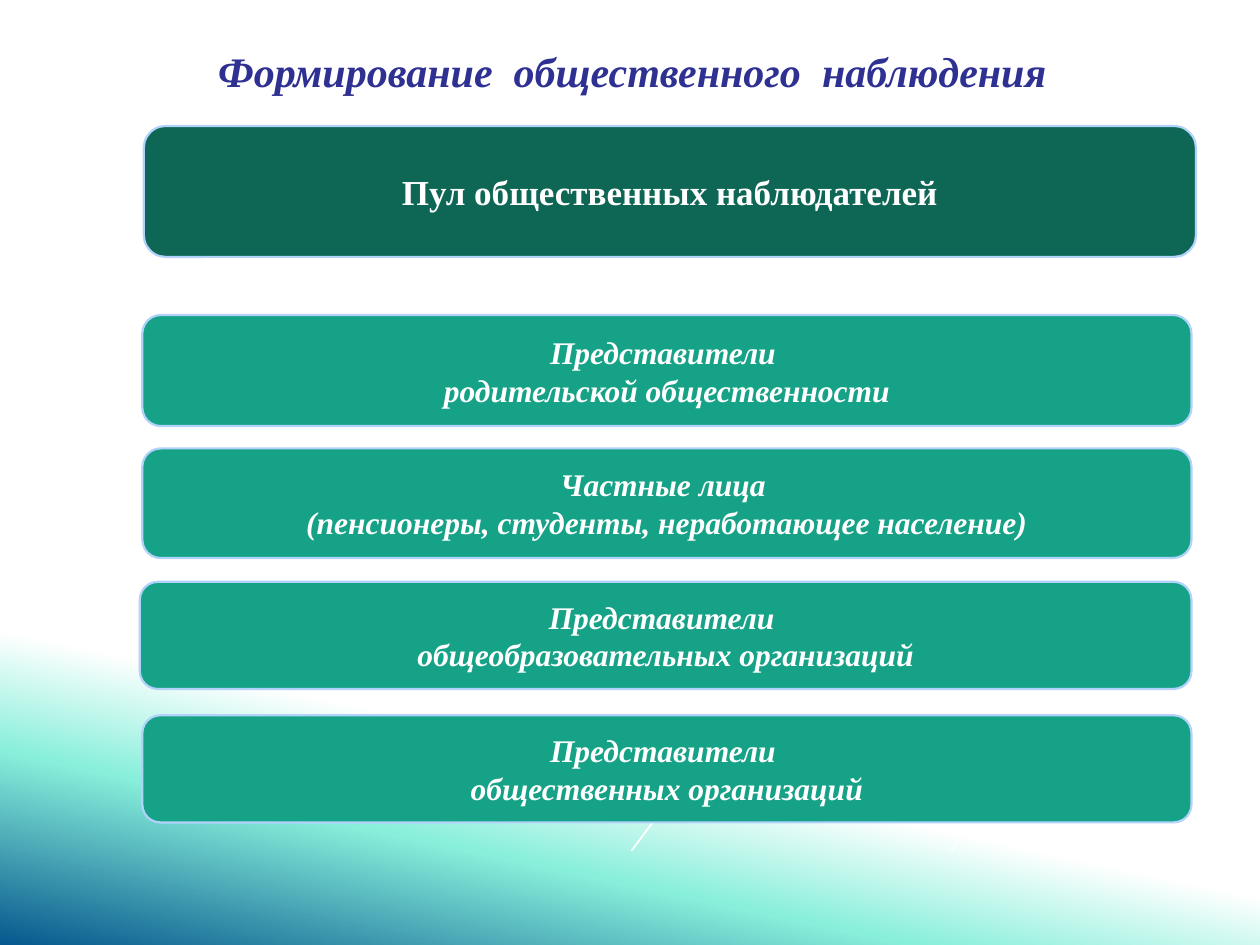
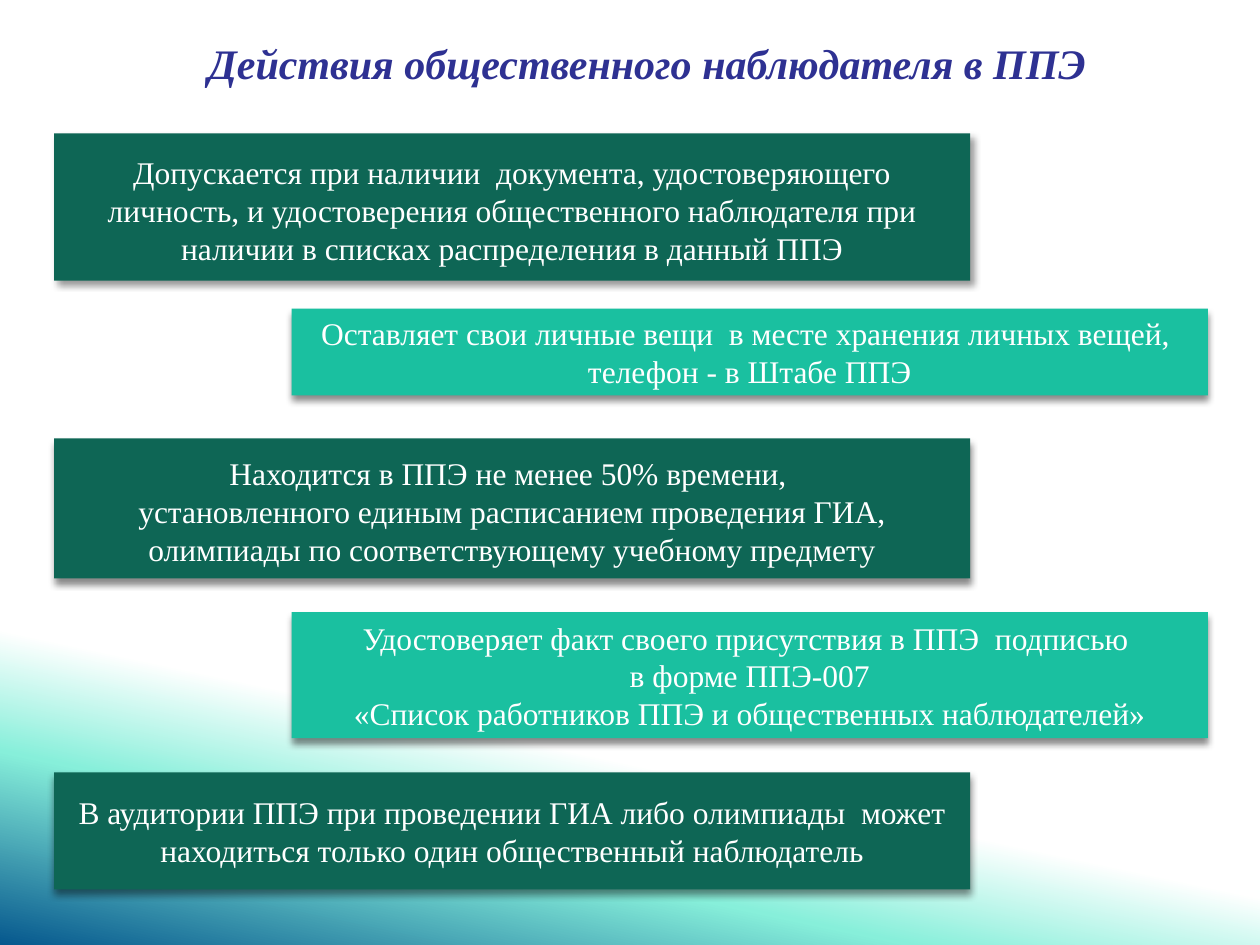
"""Builds two slides on public observers at examinations."""
from lxml import etree
from pptx import Presentation
from pptx.dml.color import RGBColor
from pptx.enum.shapes import MSO_CONNECTOR, MSO_SHAPE
from pptx.enum.text import MSO_ANCHOR, MSO_AUTO_SIZE, PP_ALIGN
from pptx.oxml import parse_xml
from pptx.oxml.ns import nsdecls, qn
from pptx.util import Cm, Pt

STRAIGHT = MSO_CONNECTOR.STRAIGHT
ROUNDED, RECTANGLE = MSO_SHAPE.ROUNDED_RECTANGLE, MSO_SHAPE.RECTANGLE
MIDDLE, CENTER = MSO_ANCHOR.MIDDLE, PP_ALIGN.CENTER
GROW = MSO_AUTO_SIZE.SHAPE_TO_FIT_TEXT

FONT = "Times New Roman"
WHITE, NAVY, OUTLINE = "FFFFFF", "2E3192", "B1D3FB"
DARK_GREEN, GREEN, LIGHT_GREEN = "0E6655", "16A287", "1AC0A0"
GRADIENT = [(74, WHITE), (84, "87EFDA"), (100, "06588E")]
RAYS = [
    (25.4, 8.23, 23.5, 10.77, 0.75),
    (25.4, 8.86, 19.18, 17.15, 0.75),
    (25.4, 9.12, 21.44, 14.4, 0.75),
    (25.4, 8.69, 21.77, 13.54, 2.25),
    (25.4, 10.24, 22.76, 13.77, 2.25),
    (25.07, 0.03, 17.15, 10.62, 1),
    (25.4, 0.25, 12.73, 17.15, 1),
    (25.4, 0.64, 15.06, 14.4, 1),
    (25.4, 0.1, 15.29, 13.56, 2.5),
    (25.4, 1.7, 16.33, 13.77, 2.5),
]


def color(value):
    return RGBColor.from_string(value)


def write(box, text, size, text_color, bold=False, italic=False):
    frame = box.text_frame
    frame.word_wrap = True
    frame.text = text
    for paragraph in frame.paragraphs:
        paragraph.alignment = CENTER
        for span in paragraph.runs:
            span.font.name = FONT
            span.font.size = Pt(size)
            span.font.bold = bold
            span.font.italic = italic
            span.font.color.rgb = color(text_color)


deck = Presentation()
deck.slide_width, deck.slide_height = Cm(25.4), Cm(19.05)

backdrop = deck.slide_master.background.fill
backdrop.gradient()
backdrop.gradient_angle = 258
stops = deck.slide_master.element.find(".//" + qn("p:bg")).find(".//" + qn("a:gsLst"))
for stop in list(stops):
    stops.remove(stop)
for position, value in GRADIENT:
    stops.append(parse_xml(
        f'<a:gs {nsdecls("a")} pos="{position * 1000}"><a:srgbClr val="{value}"/></a:gs>'))

titles = [
    ("Формирование  общественного  наблюдения", 1.9, 0.91, 21.69, 1.17, 0.9),
    ("Действия общественного наблюдателя в ППЭ", 3.2, 0.64, 19.69, 1.27, 1.0),
]
pages = []
for text, left, top, width, height, spacing in titles:
    page = deck.slides.add_slide(deck.slide_layouts[6])
    pages.append(page)
    for x1, y1, x2, y2, weight in RAYS:
        ray = page.shapes.add_connector(STRAIGHT, Cm(x1), Cm(y1), Cm(x2), Cm(y2))
        ray.line.color.rgb = color(WHITE)
        ray.line.width = Pt(weight)
        etree.SubElement(ray.element.spPr, qn("a:effectLst"))
    title = page.shapes.add_textbox(Cm(left), Cm(top), Cm(width), Cm(height))
    write(title, text, 24, NAVY, bold=True, italic=True)
    title.text_frame.auto_size = GROW
    title.text_frame.paragraphs[0].line_spacing = spacing

formation_page, actions_page = pages

groups = [
    ("Представители \nродительской общественности", 2.87, 2.24),
    ("Частные лица \n(пенсионеры, студенты, неработающее население)", 2.87, 2.21),
    ("Представители \nобщеобразовательных организаций", 2.82, 2.16),
    ("Представители \vобщественных организаций", 2.87, 2.16),
]
panels = [("Пул общественных наблюдателей", 2.9, 2.54, 24.11, 2.64, DARK_GREEN, 20, False)]
for index, (text, left, height) in enumerate(groups):
    panels.append((text, left, 6.35 + 2.69 * index, 24.02, height, GREEN, 18, True))
for text, left, top, right, height, fill, size, italic in panels:
    panel = formation_page.shapes.add_shape(
        ROUNDED, Cm(left), Cm(top), Cm(right - left), Cm(height))
    panel.shadow.inherit = False
    panel.fill.solid()
    panel.fill.fore_color.rgb = color(fill)
    panel.line.color.rgb = color(OUTLINE)
    panel.line.width = Pt(1.25)
    panel.text_frame.vertical_anchor = MIDDLE
    write(panel, text, size, WHITE, bold=True, italic=italic)

actions = [
    ("Допускается при наличии  документа, удостоверяющего личность, и удостоверения "
     "общественного наблюдателя при наличии в списках распределения в данный ППЭ",
     2.69, 2.97, 0.23, 40, 45),
    ("Оставляет свои личные вещи  в месте хранения личных вещей, \v телефон - в Штабе ППЭ ",
     6.22, 1.75, 0.13, 46, 90),
    ("Находится в ППЭ не менее 50% времени, \vустановленного единым расписанием "
     "проведения ГИА, олимпиады по соответствующему учебному предмету",
     8.84, 2.82, 0.23, 46, 90),
    ("Удостоверяет факт своего присутствия в ППЭ  подписью \v в форме ППЭ-007 \n"
     "«Список работников ППЭ и общественных наблюдателей»",
     12.34, 2.54, 0.13, 46, 90),
    ("В аудитории ППЭ при проведении ГИА либо олимпиады  может находиться только один "
     "общественный наблюдатель",
     15.57, 2.36, 0.13, 46, 90),
]
for index, (text, top, height, inset, opacity, angle) in enumerate(actions):
    left, fill = [(1.09, DARK_GREEN), (5.88, LIGHT_GREEN)][index % 2]
    action = actions_page.shapes.add_shape(
        RECTANGLE, Cm(left), Cm(top), Cm(18.47), Cm(height))
    action.shadow.inherit = False
    action.fill.solid()
    action.fill.fore_color.rgb = color(fill)
    action.line.fill.background()
    effects = action.element.spPr.find(qn("a:effectLst"))
    effects.append(parse_xml(
        f'<a:outerShdw {nsdecls("a")} blurRad="{Pt(4)}" dist="{Pt(3)}" dir="{angle * 60000}" '
        f'rotWithShape="0"><a:srgbClr val="000000"><a:alpha val="{opacity * 1000}"/>'
        '</a:srgbClr></a:outerShdw>'))
    action.text_frame.vertical_anchor = MIDDLE
    action.text_frame.margin_top = Cm(inset)
    write(action, text, 18, WHITE)

deck.save("out.pptx")
